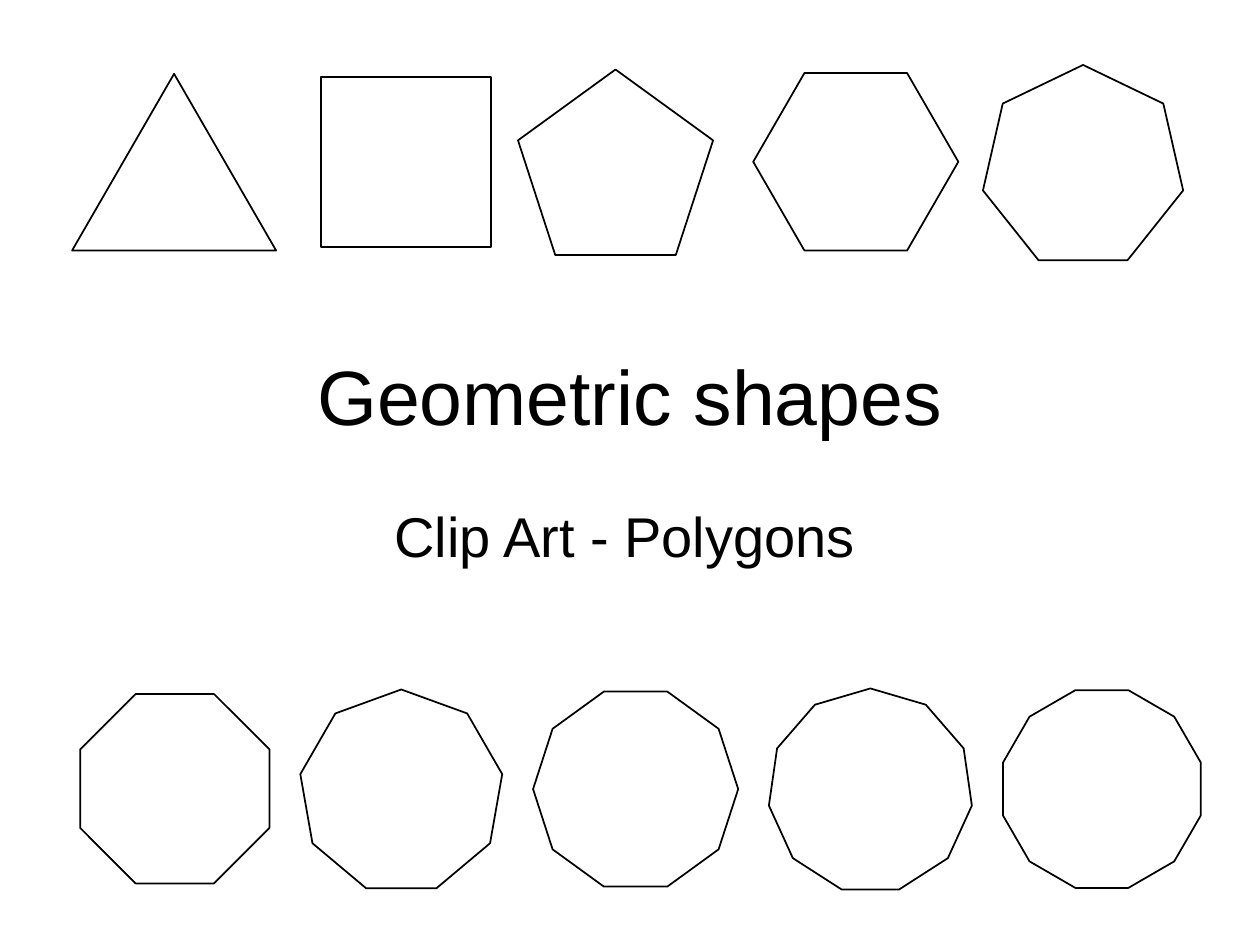
import math

import pptx
import pptx.dml.color
import pptx.enum.shapes
import pptx.enum.text
import pptx.util

Pt = pptx.util.Pt
RGB = pptx.dml.color.RGBColor.from_string

THEME = {
    "font": "Arial",
    "ink": RGB("000000"),
    "paper": RGB("FFFFFF"),
    "title_size": Pt(44),
    "subtitle_size": Pt(32),
    "outline": Pt(1),
}

# sides, left, top, width in points
POLYGONS = [
    (3, 41.2, 42.2, 116.6),
    (4, 183.6, 43.9, 97.2),
    (5, 296, 39.7, 111.5),
    (6, 430.4, 41.7, 117.2),
    (7, 561.7, 37.1, 114.4),
    (8, 45.8, 396.6, 108.2),
    (9, 171.6, 394, 115.4),
    (10, 304.6, 395.2, 117.2),
    (11, 439.4, 393.4, 116),
    (12, 573.2, 394.4, 113),
]


def regular_polygon(sides, left, top, width):
    """Corners in EMU of a regular polygon resting on a flat side."""
    angles = [math.pi * (0.5 + (2 * i + 1) / sides) for i in range(sides)]
    xs = [math.cos(a) for a in angles]
    ys = [math.sin(a) for a in angles]
    scale = width / (max(xs) - min(xs))
    return [
        (Pt(left + (x - min(xs)) * scale), Pt(top + (y - min(ys)) * scale))
        for x, y in zip(xs, ys)
    ]


deck = pptx.Presentation()
deck.slide_width, deck.slide_height = Pt(720), Pt(540)
slide = deck.slides.add_slide(deck.slide_layouts[0])
slide.background.fill.solid()
slide.background.fill.fore_color.rgb = THEME["paper"]

title, subtitle = slide.placeholders
headings = [
    (title, "Geometric shapes", (54, 167.8, 612, 115.9), "title_size", "MIDDLE"),
    (subtitle, "Clip Art - Polygons", (105.1, 283, 504, 51.1), "subtitle_size", "TOP"),
]
for heading, wording, box, size, anchor in headings:
    for side, length in zip(("left", "top", "width", "height"), box):
        setattr(heading, side, Pt(length))
    frame = heading.text_frame
    frame.text = wording
    frame.vertical_anchor = pptx.enum.text.MSO_ANCHOR[anchor]
    line = frame.paragraphs[0]
    line.alignment = pptx.enum.text.PP_ALIGN.CENTER
    font = line.runs[0].font
    for name, value in {"name": THEME["font"], "size": THEME[size]}.items():
        setattr(font, name, value)
    font.color.rgb = THEME["ink"]

for sides, left, top, width in POLYGONS:
    if sides == 4:
        polygon = slide.shapes.add_shape(
            pptx.enum.shapes.MSO_SHAPE.RECTANGLE,
            Pt(left), Pt(top), Pt(width), Pt(width),
        )
    else:
        first, *others = regular_polygon(sides, left, top, width)
        outline = slide.shapes.build_freeform(*first)
        outline.add_line_segments(others, close=True)
        polygon = outline.convert_to_shape()
    polygon.shadow.inherit = False
    polygon.fill.solid()
    polygon.fill.fore_color.rgb = THEME["paper"]
    polygon.line.color.rgb = THEME["ink"]
    polygon.line.width = THEME["outline"]

deck.save("out.pptx")
